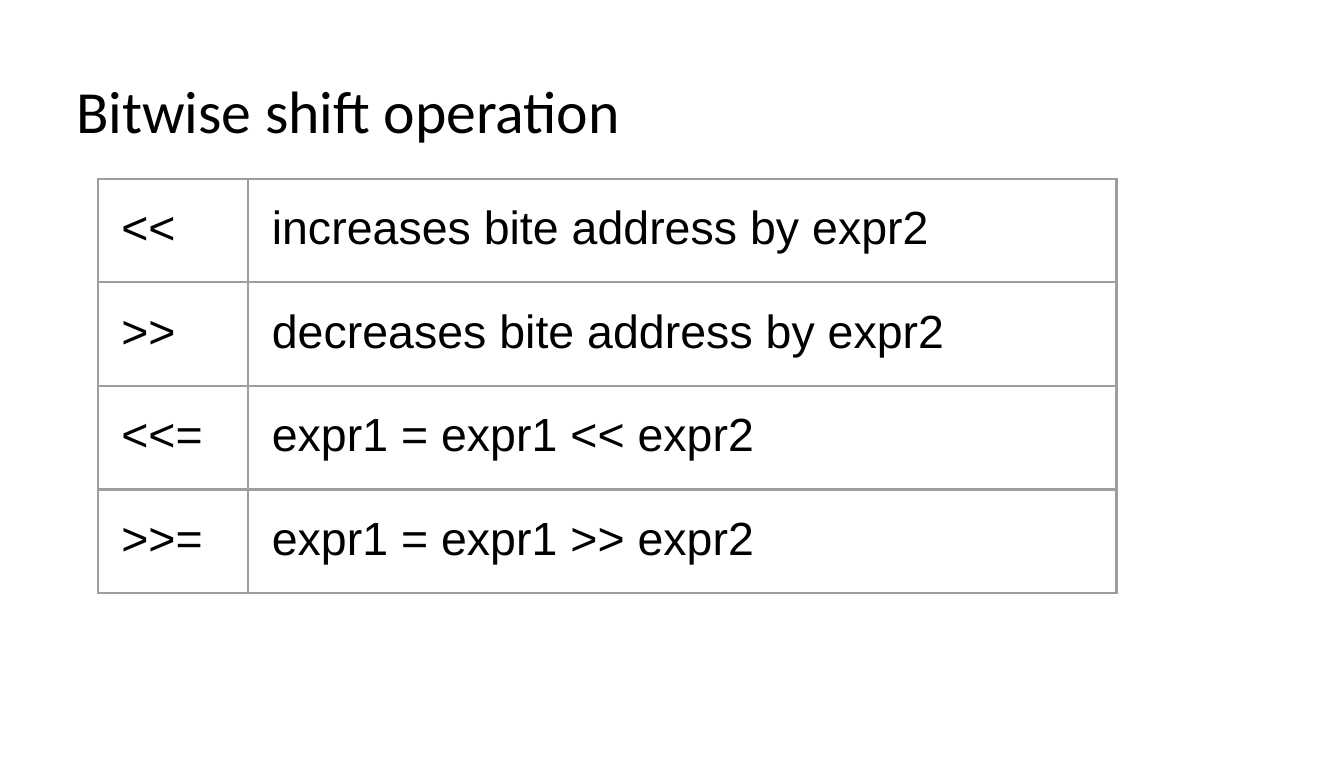
from dataclasses import dataclass

from lxml.etree import SubElement
from pptx import Presentation
from pptx.dml.color import RGBColor as RGB
from pptx.enum.text import MSO_ANCHOR as Anchor
from pptx.oxml.ns import qn
from pptx.slide import Slide
from pptx.table import _Cell as Cell
from pptx.text.text import TextFrame
from pptx.util import Cm, Pt


@dataclass(frozen=True)
class Theme:
    background: str = "FFFFFF"
    text: str = "000000"
    border: str = "9E9E9E"
    title_font: str = "Calibri"
    table_font: str = "Arial"
    title_size: int = 18
    table_size: int = 14
    border_width: float = 0.75


@dataclass(frozen=True)
class Operator:
    symbol: str
    meaning: str


THEME = Theme()
INSET = Cm(0.25)
COLUMN_WIDTHS = (Cm(1.6), Cm(9.23))
ROW_HEIGHT = Cm(1.1)
OPERATORS = (
    Operator("<<", "increases bite address by expr2"),
    Operator(">>", "decreases bite address by expr2"),
    Operator("<<=", "expr1 = expr1 << expr2"),
    Operator(">>=", "expr1 = expr1 >> expr2"),
)


def write_text(tf: TextFrame, text: str, *, font: str, size: float,
               color: str = THEME.text) -> None:
    r = tf.paragraphs[0].add_run()
    r.text = text
    r.font.name = font
    r.font.size = Pt(size)
    r.font.color.rgb = RGB.from_string(color)


def set_insets(box: TextFrame | Cell) -> None:
    box.margin_left = box.margin_right = INSET
    box.margin_top = box.margin_bottom = INSET


def set_borders(cell: Cell) -> None:
    props = cell._tc.get_or_add_tcPr()
    for i, side in enumerate(("lnL", "lnR", "lnT", "lnB")):
        line = props.makeelement(qn(f"a:{side}"), {"w": str(Pt(THEME.border_width))})
        fill = SubElement(line, qn("a:solidFill"))
        SubElement(fill, qn("a:srgbClr"), val=THEME.border)
        props.insert(i, line)


def draw_title(s: Slide, text: str) -> None:
    tf = s.shapes.add_textbox(Cm(0.56), Cm(0.53), Cm(8.97), Cm(1.27)).text_frame
    tf.word_wrap = True
    set_insets(tf)
    write_text(tf, text, font=THEME.title_font, size=THEME.title_size)


def draw_cell(cell: Cell, text: str) -> None:
    cell.fill.background()
    cell.vertical_anchor = Anchor.TOP
    set_insets(cell)
    set_borders(cell)
    write_text(cell.text_frame, text, font=THEME.table_font, size=THEME.table_size)


def draw_operators(s: Slide, operators: tuple[Operator, ...]) -> None:
    table = s.shapes.add_table(
        len(operators), len(COLUMN_WIDTHS), Cm(1.04), Cm(1.9),
        sum(COLUMN_WIDTHS), ROW_HEIGHT * len(operators),
    ).table
    table.first_row = table.horz_banding = False
    for column, width in zip(table.columns, COLUMN_WIDTHS):
        column.width = width
    for i, operator in enumerate(operators):
        table.rows[i].height = ROW_HEIGHT
        draw_cell(table.cell(i, 0), operator.symbol)
        draw_cell(table.cell(i, 1), operator.meaning)


def main() -> None:
    prs = Presentation()
    prs.slide_width, prs.slide_height = Pt(405), Pt(228)
    s = prs.slides.add_slide(prs.slide_layouts[6])
    s.background.fill.solid()
    s.background.fill.fore_color.rgb = RGB.from_string(THEME.background)
    draw_title(s, "Bitwise shift operation")
    draw_operators(s, OPERATORS)
    prs.save("out.pptx")


if __name__ == "__main__":
    main()
